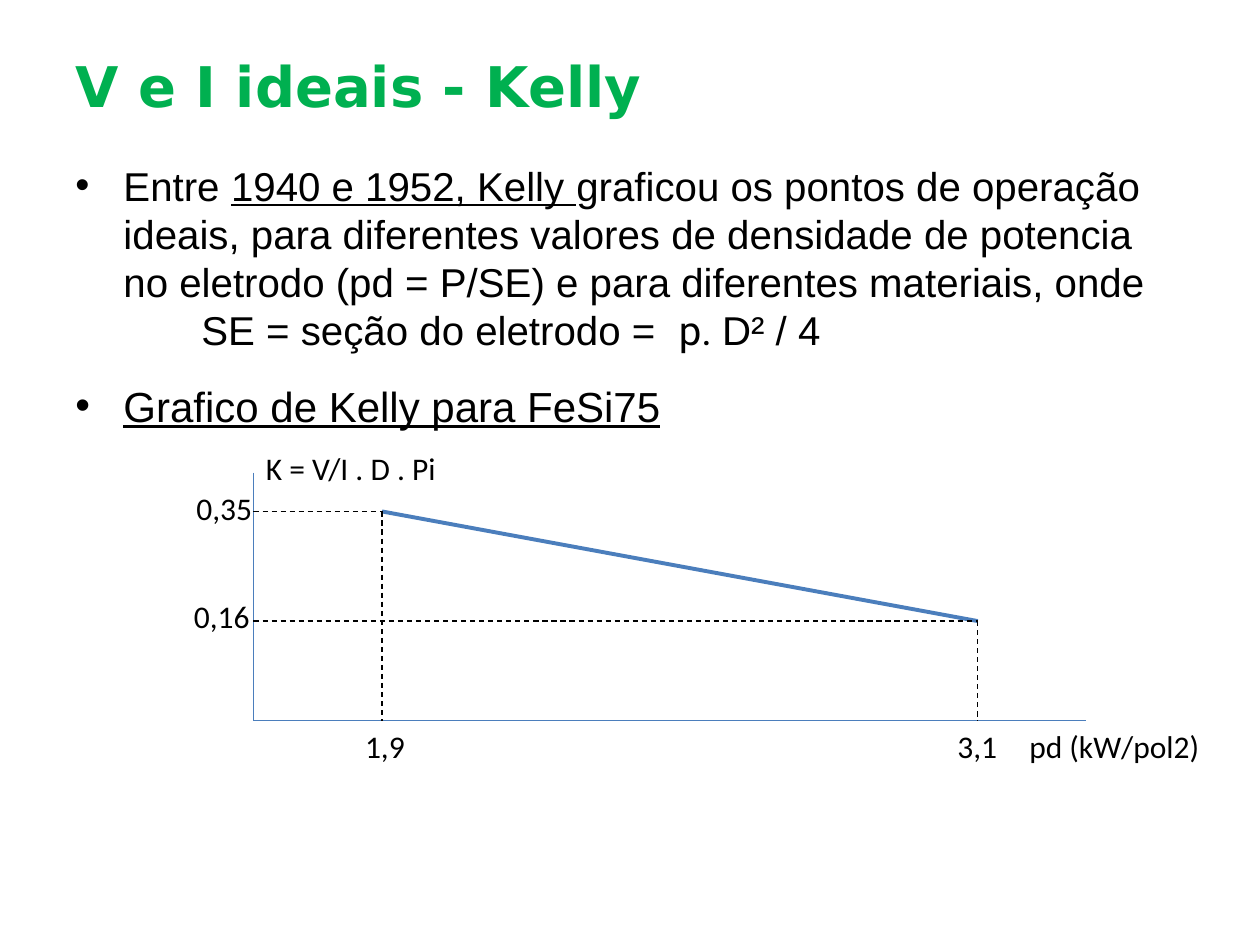
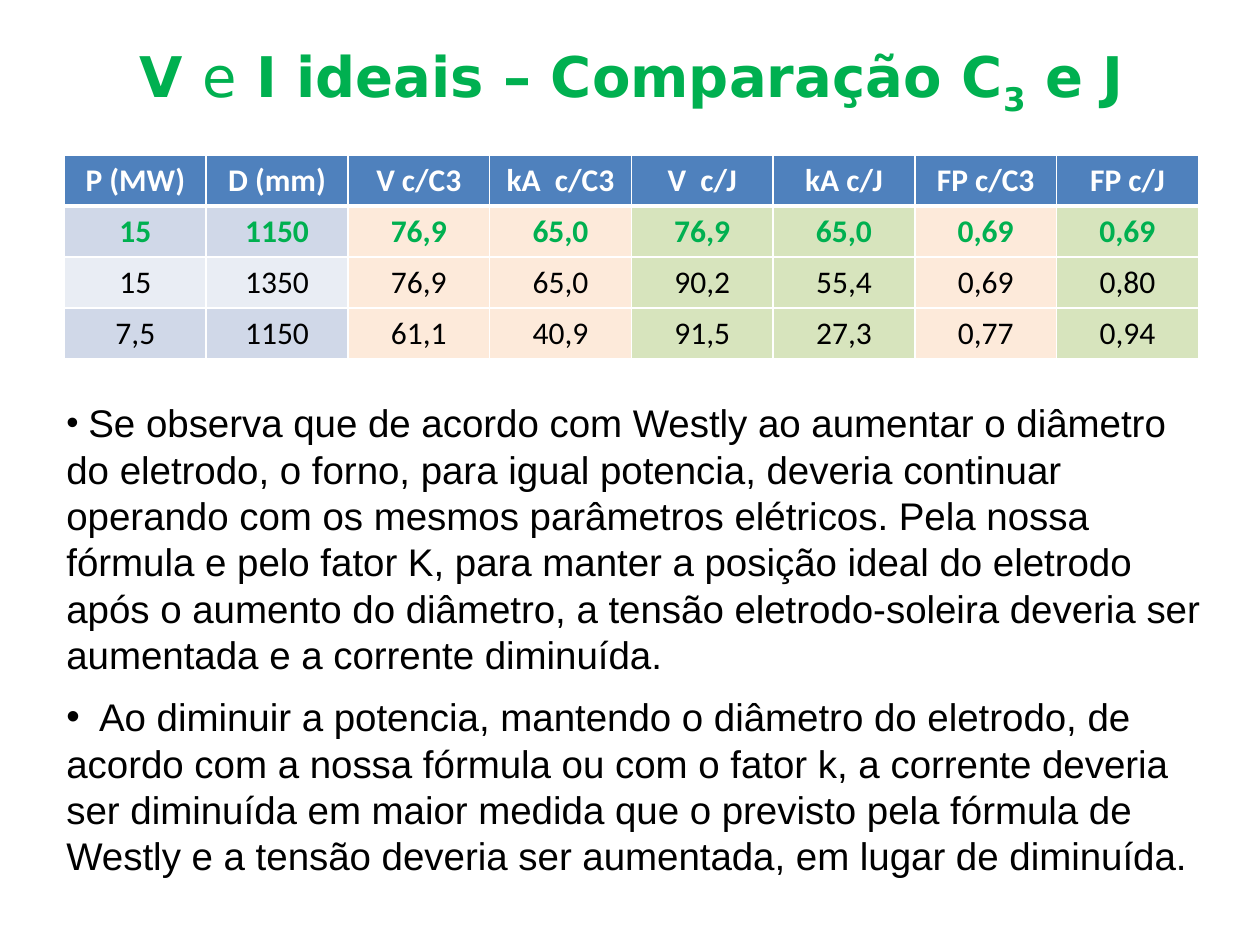
"""Builds two slides on ideal furnace voltage and current."""
from pptx import Presentation
from pptx.dml.color import RGBColor as RGB
from pptx.enum.dml import MSO_LINE_DASH_STYLE as DASH
from pptx.enum.shapes import MSO_CONNECTOR as CONN
from pptx.enum.text import MSO_ANCHOR as ANCHOR, PP_ALIGN as ALIGN
from pptx.oxml.ns import qn
from pptx.util import Cm, Pt
from lxml.etree import SubElement

COLORS = {
    "title": "00B050", "text": "000000", "line": "4B7EBC", "white": "FFFFFF",
    "header": "4F81BD", "band_dark": "D0D8E8", "band_light": "E9EDF4",
    "peach": "FDEADA", "green": "D7E4BD",
}
TITLE = dict(font="DejaVu Sans", size=32, color="title", bold=True)
BODY = dict(font="Arial", color="text")
LABEL = dict(font="Calibri", size=18, color="text")

ROWS = [
    ["P (MW)", "D (mm)", "V c/C3", "kA  c/C3", "V  c/J", "kA c/J", "FP c/C3", "FP c/J"],
    ["15", "1150", "76,9", "65,0", "76,9", "65,0", "0,69", "0,69"],
    ["15", "1350", "76,9", "65,0", "90,2", "55,4", "0,69", "0,80"],
    ["7,5", "1150", "61,1", "40,9", "91,5", "27,3", "0,77", "0,94"],
]
COLUMN_FILLS = [None, None, "peach", "peach", "green", "green", "peach", "green"]


def rgb(name):
    """Return the palette colour of that name."""
    return RGB.from_string(COLORS[name])


def add_run(p, text, font="Arial", size=18, color="text", bold=False,
            underline=False, baseline=0):
    """Add one formatted run to a paragraph."""
    r = p.add_run()
    r.text = text
    f = r.font
    f.name, f.size, f.bold, f.underline = font, Pt(size), bold, underline
    f.color.rgb = rgb(color)
    if baseline:
        r._r.get_or_add_rPr().set("baseline", str(baseline * 1000))


def write(p, runs, align=ALIGN.LEFT, before=0, pitch=None, bullet=False,
          left=0, first=0, **font):
    """Fill a paragraph with strings or (string, changed format) pairs."""
    p.alignment, p.space_before = align, Pt(before)
    if pitch:
        p.line_spacing = Pt(pitch)
    pPr = p._p.get_or_add_pPr()
    pPr.set("marL", str(Cm(left)))
    pPr.set("indent", str(Cm(first)))
    if bullet:
        SubElement(pPr, qn("a:buFont")).set("typeface", "Arial")
        SubElement(pPr, qn("a:buChar")).set("char", "•")
    for run in [runs] if isinstance(runs, str) else runs:
        text, changes = (run, {}) if isinstance(run, str) else run
        add_run(p, text, **{**font, **changes})


def add_text(s, box, paragraphs, anchor=ANCHOR.TOP, **fmt):
    """Add a wrapping text box from (runs, changed format) paragraphs."""
    tf = s.shapes.add_textbox(*map(Cm, box)).text_frame
    tf.word_wrap, tf.vertical_anchor = True, anchor
    for i, (runs, changes) in enumerate(paragraphs):
        p = tf.add_paragraph() if i else tf.paragraphs[0]
        write(p, runs, **{**fmt, **changes})


def add_title(s, box, runs, **fmt):
    """Add a slide title."""
    add_text(s, box, [(runs, {})], anchor=ANCHOR.MIDDLE, **TITLE, **fmt)


def add_line(s, start, end, color="line", width=0.75, dashed=False):
    """Draw a straight line between two points."""
    c = s.shapes.add_connector(CONN.STRAIGHT, *map(Cm, (*start, *end)))
    c.line.color.rgb, c.line.width = rgb(color), Pt(width)
    if dashed:
        c.line.dash_style = DASH.DASH
    SubElement(c._element.spPr, qn("a:effectLst"))


def add_kelly_graph(s):
    """Draw the axes, the Kelly line, its guides and labels."""
    x0, y0 = 5.11, 14.53
    (x1, y1), (x2, y2) = start, end = (7.7, 10.31), (19.71, 12.52)
    add_line(s, (x0, 9.53), (x0, y0))
    add_line(s, (x0, y0), (21.89, y0))
    add_line(s, start, end, width=2.25)
    for x, y in (start, end):
        add_line(s, (x0, y), (x, y), color="text", dashed=True)
        add_line(s, (x, y), (x, y0), color="text", dashed=True)
    labels = [
        ("K = V/I . D . Pi", x0, 8.92, 4.19),
        ("pd (kW/pol2)", 20.5, y0, 4.9),
        ("0,35", 3.71, y1 - 0.58, 1.8),
        ("0,16", 3.66, y2 - 0.61, 1.8),
        ("1,9", x1 - 0.59, y0, 1.4),
        ("3,1", x2 - 0.66, y0, 1.5),
    ]
    for text, x, y, width in labels:
        add_text(s, (x, y, width, 1.02), [(text, {})], **LABEL)


def set_borders(cell, **widths):
    """Give a cell white borders with the widths by side."""
    tcPr = cell._tc.get_or_add_tcPr()
    for i, side in enumerate("LRTB"):
        ln = SubElement(tcPr, qn(f"a:ln{side}"), w=str(Pt(widths.get(side, 1))))
        fill = SubElement(ln, qn("a:solidFill"))
        SubElement(fill, qn("a:srgbClr"), val=COLORS["white"])
        tcPr.insert(i, ln)


def add_comparison_table(s, box):
    """Add the table that compares C3 and J."""
    t = s.shapes.add_table(len(ROWS), len(ROWS[0]), *map(Cm, box)).table
    for i, row in enumerate(ROWS):
        band = "band_dark" if i % 2 else "band_light"
        color = ["white", "title", "text", "text"][i]
        for j, value in enumerate(row):
            cell = t.cell(i, j)
            cell.fill.solid()
            cell.fill.fore_color.rgb = rgb(COLUMN_FILLS[j] or band if i else "header")
            set_borders(cell, T=3 if i == 1 else 1, B=1 if i else 3)
            write(cell.text_frame.paragraphs[0], value, align=ALIGN.CENTER,
                  **{**LABEL, "color": color, "bold": i < 2})


def build_kelly_slide(s):
    """Build the slide on Kelly's ideal operating points."""
    add_title(s, (1.27, 0.53, 22.86, 2.39), "V e I ideais - Kelly")
    underlined = {"underline": True}
    hanging = dict(bullet=True, left=0.97, first=-0.97)
    add_text(s, (1.27, 3.12, 22.86, 13.89), [
        (["Entre ", ("1940 e 1952, Kelly ", underlined),
          "graficou os pontos de operação ideais, para diferentes valores de "
          "densidade de potencia no eletrodo (pd = P/SE) e para diferentes "
          "materiais, onde"], hanging),
        (["SE = seção do eletrodo =  ", ("p. ", {"font": "Roboto"}), "D² / 4"],
         dict(left=2.54)),
        ("Grafico de Kelly para FeSi75",
         dict(hanging, size=24, pitch=28.5, before=15.5, **underlined)),
    ], size=23, pitch=27.5, **BODY)
    add_kelly_graph(s)


def build_comparison_slide(s):
    """Build the slide that compares C3 and J."""
    add_title(s, (1.3, 0.53, 22.86, 2.16),
              ["V ", ("e", {"bold": False}), " I ideais – Comparação C",
               ("3", {"baseline": -25}), " e J"], align=ALIGN.CENTER)
    add_comparison_table(s, (1.3, 3.12, 22.86, 4.12))
    add_text(s, (1.09, 7.92, 23.39, 10.01), [
        ([(" ", {"size": 20}),
          "Se observa que de acordo com Westly ao aumentar o diâmetro do "
          "eletrodo, o forno, para igual potencia, deveria continuar operando "
          "com os mesmos parâmetros elétricos. Pela nossa fórmula e pelo fator "
          "K, para manter a posição ideal do eletrodo após o aumento do "
          "diâmetro, a tensão eletrodo-soleira deveria ser aumentada e a "
          "corrente diminuída."], {}),
        ("  Ao diminuir a potencia, mantendo o diâmetro do eletrodo, de acordo "
         "com a nossa fórmula ou com o fator k, a corrente deveria ser "
         "diminuída em maior medida que o previsto pela fórmula de Westly e a "
         "tensão deveria ser aumentada, em lugar de diminuída.", {"before": 9}),
    ], size=22, pitch=26.5, bullet=True, **BODY)


def main():
    """Create and save the presentation."""
    prs = Presentation()
    prs.slide_width, prs.slide_height = Cm(25.4), Cm(19.05)
    for build in (build_kelly_slide, build_comparison_slide):
        build(prs.slides.add_slide(prs.slide_layouts[6]))
    prs.save("out.pptx")


if __name__ == "__main__":
    main()
